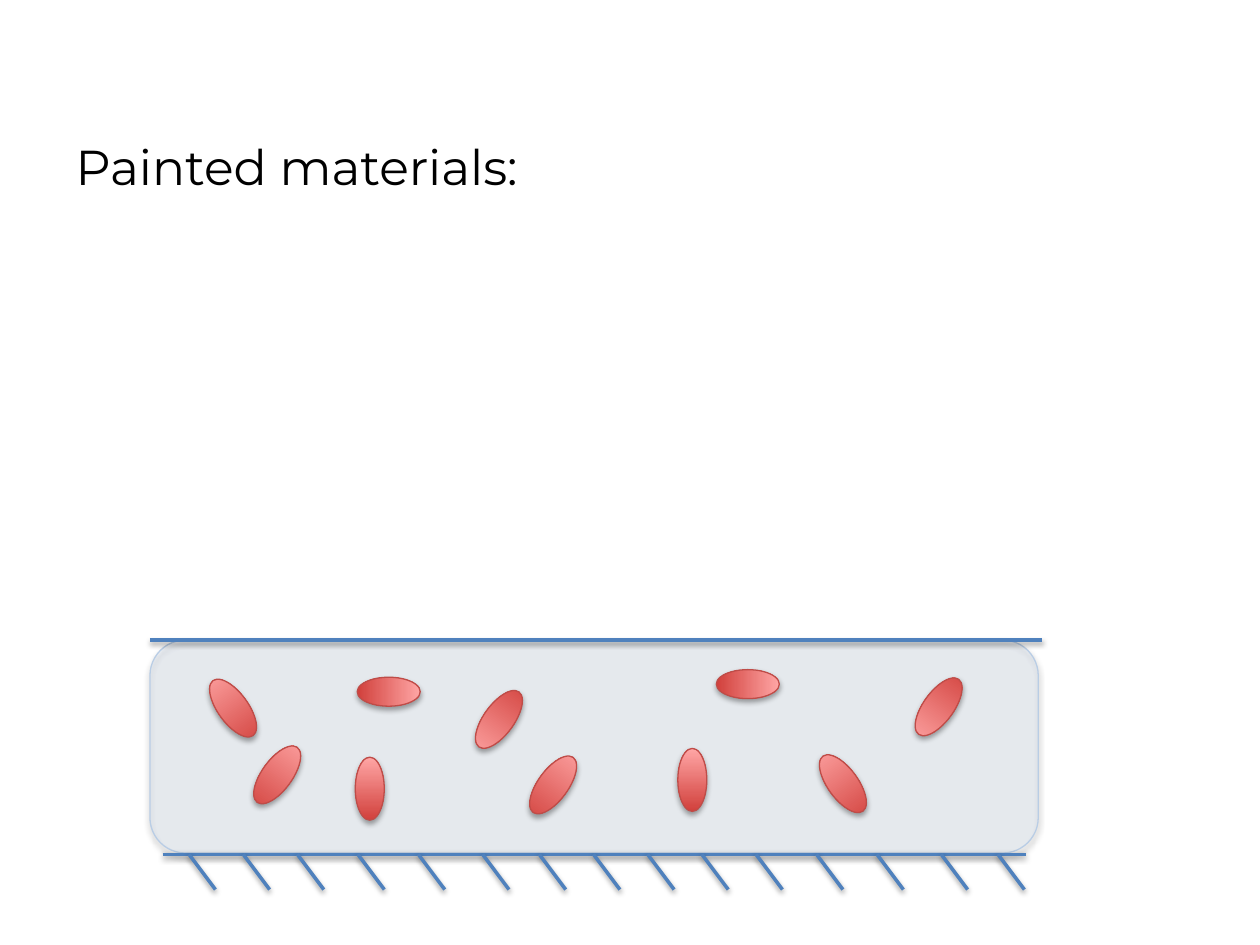
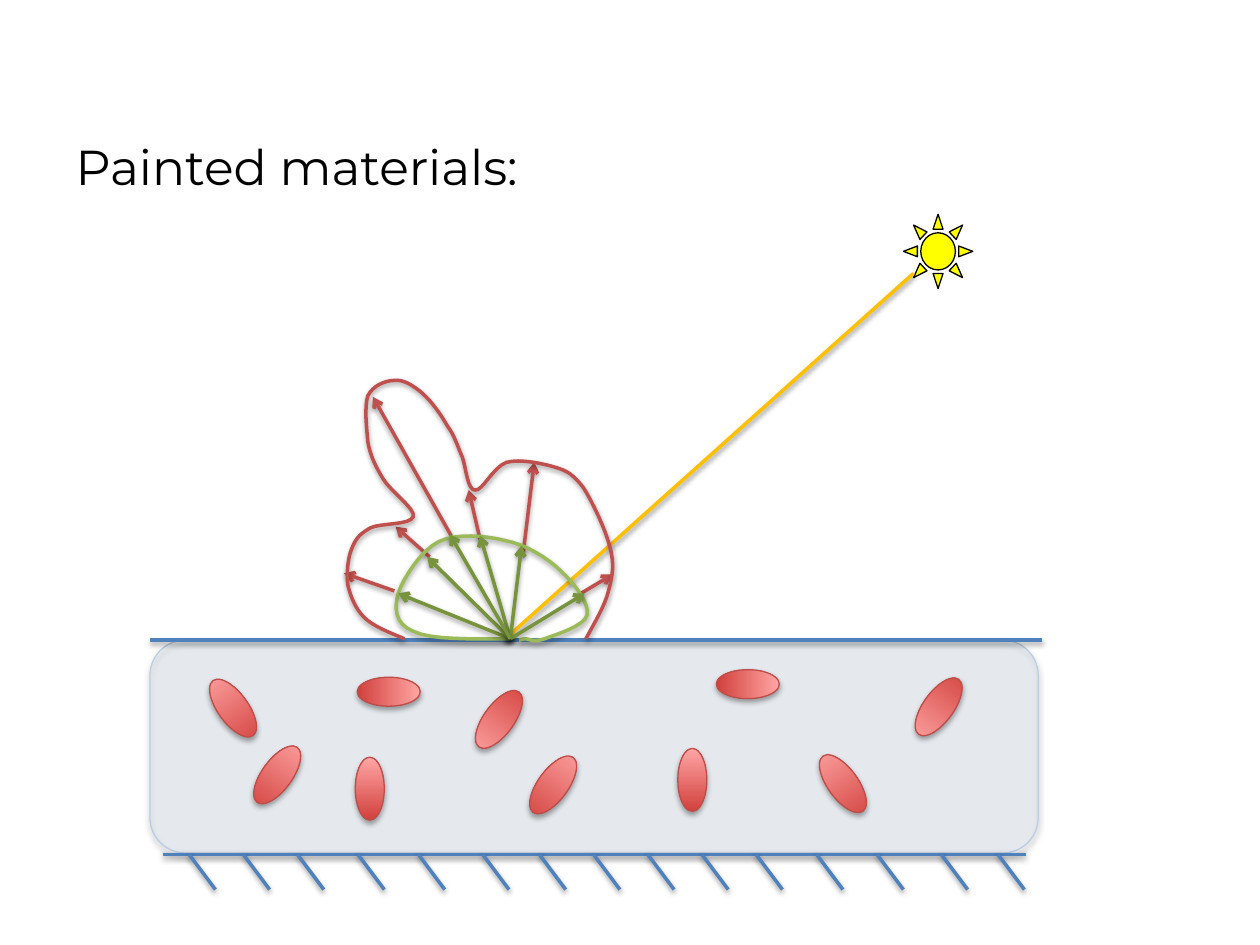
from itertools import accumulate

from lxml.etree import SubElement
from pptx import Presentation
from pptx.dml.color import RGBColor
from pptx.enum.shapes import MSO_CONNECTOR, MSO_SHAPE
from pptx.enum.text import MSO_ANCHOR, PP_ALIGN
from pptx.oxml.ns import qn
from pptx.util import Inches, Pt

FONT = "Montserrat"
BLACK = RGBColor(0x00, 0x00, 0x00)
BLUE = RGBColor(0x4F, 0x81, 0xBD)
PALE = RGBColor(0xC6, 0xD9, 0xF1)
EDGE = RGBColor(0xB9, 0xCD, 0xE5)
RED = RGBColor(0xC0, 0x50, 0x4D)
RUST = RGBColor(0xBF, 0x4C, 0x48)
DARK = RGBColor(0xD1, 0x40, 0x3C)
PINK = RGBColor(0xFF, 0xA6, 0xA5)
GREEN = RGBColor(0x9B, 0xBB, 0x59)
OLIVE = RGBColor(0x77, 0x93, 0x3C)
GOLD = RGBColor(0xFF, 0xC0, 0x00)
YELLOW = RGBColor(0xFF, 0xFF, 0x00)

TOP, BASE = 5.08, 6.78
GAPS = (0.43, 0.43, 0.48, 0.48, 0.51, 0.45)
TICKS = tuple(accumulate((1.5, *GAPS, 0.43, 0.43, *GAPS)))

SMALL, LARGE = (0.23, 0.5), (0.24, 0.54)
FLAKES = (
    (5.38, 5.94, SMALL, 0, False),
    (5.82, 5.18, SMALL, 90, False),
    (6.57, 5.95, LARGE, 324, False),
    (7.33, 5.34, LARGE, 36, True),
    (2.08, 5.88, LARGE, 36, False),
    (1.73, 5.35, LARGE, 324, False),
    (3.84, 5.44, LARGE, 36, True),
    (2.97, 5.24, SMALL, 90, False),
    (2.82, 6.01, SMALL, 0, False),
    (4.27, 5.96, LARGE, 36, False),
)

HIT = (4.05, 5.07)
RED_RAYS = (
    ((3.13, 4.69), (2.73, 4.55)),
    ((3.41, 4.42), (3.14, 4.18)),
    ((3.81, 4.28), (3.72, 3.89)),
    ((4.15, 4.41), (4.24, 3.67)),
    ((4.61, 4.71), (4.86, 4.56)),
    ((3.58, 4.25), (2.96, 3.15)),
)
GREEN_TIPS = ((3.16, 4.71), (3.39, 4.42), (3.81, 4.25),
              (4.14, 4.33), (4.64, 4.71), (3.57, 4.24))

RED_LOBE = (
    (3.21, 5.07),
    (3.09, 5.02), (2.96, 4.97), (2.89, 4.9),
    (2.82, 4.83), (2.78, 4.73), (2.76, 4.64),
    (2.75, 4.55), (2.76, 4.43), (2.79, 4.36),
    (2.82, 4.28), (2.85, 4.24), (2.94, 4.19),
    (3.02, 4.15), (3.26, 4.17), (3.28, 4.1),
    (3.3, 4.04), (3.1, 3.9), (3.04, 3.8),
    (2.98, 3.7), (2.94, 3.62), (2.92, 3.51),
    (2.91, 3.4), (2.89, 3.23), (2.92, 3.14),
    (2.96, 3.06), (3.06, 3.02), (3.13, 3.02),
    (3.2, 3.01), (3.28, 3.06), (3.35, 3.12),
    (3.42, 3.18), (3.5, 3.29), (3.55, 3.38),
    (3.61, 3.46), (3.63, 3.54), (3.67, 3.63),
    (3.7, 3.72), (3.71, 3.89), (3.77, 3.89),
    (3.83, 3.9), (3.91, 3.71), (4.02, 3.67),
    (4.13, 3.64), (4.31, 3.68), (4.41, 3.71),
    (4.51, 3.74), (4.55, 3.77), (4.63, 3.87),
    (4.7, 3.98), (4.81, 4.21), (4.84, 4.34),
    (4.88, 4.48), (4.86, 4.57), (4.83, 4.69),
    (4.8, 4.81), (4.72, 4.94), (4.65, 5.07),
)
GREEN_LOBE = (
    (4.05, 5.07),
    (3.74, 5.07), (3.42, 5.08), (3.28, 5.01),
    (3.13, 4.95), (3.13, 4.82), (3.16, 4.71),
    (3.2, 4.59), (3.34, 4.37), (3.48, 4.3),
    (3.62, 4.23), (3.85, 4.25), (4.01, 4.29),
    (4.17, 4.32), (4.35, 4.43), (4.45, 4.53),
    (4.56, 4.63), (4.68, 4.79), (4.66, 4.88),
    (4.64, 4.97), (4.4, 5.04), (4.32, 5.07),
    (4.23, 5.1), (4.2, 5.07), (4.17, 5.07),
    (4.14, 5.07), (4.13, 5.08), (4.12, 5.08),
)


def trace(knots, steps=8):
    points = [knots[0]]
    for i in range(0, len(knots) - 1, 3):
        a, b, c, d = knots[i:i + 4]
        for step in range(1, steps + 1):
            t = step / steps
            u = 1 - t
            points.append(tuple(
                u**3 * p + 3 * u * u * t * q + 3 * u * t * t * r + t**3 * s
                for p, q, r, s in zip(a, b, c, d)))
    return [(Inches(x), Inches(y)) for x, y in points]


class Deck:
    def __init__(self):
        self.show = Presentation()
        self.show.slide_width = Inches(10)
        self.show.slide_height = Inches(7.5)
        self.slide = None

    def start(self, text):
        self.slide = self.show.slides.add_slide(self.show.slide_layouts[5])
        title = self.slide.shapes.title
        title.left, title.top = Inches(0.5), Inches(0.8)
        title.width, title.height = Inches(9), Inches(1.03)
        title.text_frame.text = text
        title.text_frame.vertical_anchor = MSO_ANCHOR.MIDDLE
        para = title.text_frame.paragraphs[0]
        para.alignment = PP_ALIGN.LEFT
        para.font.name = FONT
        para.font.size = Pt(28)
        para.font.color.rgb = BLACK

    def shade(self, shape, drop, alpha):
        effect = SubElement(shape._element.spPr, qn("a:effectLst"))
        shadow = SubElement(effect, qn("a:outerShdw"), blurRad=str(Pt(3.1)),
                            dist=str(Pt(drop)), dir="5400000", rotWithShape="0")
        color = SubElement(shadow, qn("a:srgbClr"), val=str(BLACK))
        SubElement(color, qn("a:alpha"), val=str(alpha * 1000))

    def stroke(self, shape, color, width=2):
        shape.line.color.rgb = color
        shape.line.width = Pt(width)

    def line(self, start, end, color=BLUE, arrow=False):
        ends = [Inches(v) for v in (*start, *end)]
        link = self.slide.shapes.add_connector(MSO_CONNECTOR.STRAIGHT, *ends)
        self.stroke(link, color)
        if arrow:
            SubElement(link.line._get_or_add_ln(), qn("a:tailEnd"), type="arrow")
        self.shade(link, 1.6, 38)

    def shape(self, kind, x, y, w, h, edge, width):
        box = [Inches(v) for v in (x, y, w, h)]
        shape = self.slide.shapes.add_shape(kind, *box)
        self.stroke(shape, edge, width)
        return shape

    def pane(self):
        pane = self.shape(MSO_SHAPE.ROUNDED_RECTANGLE,
                          1.19, TOP, 7.05, 1.69, EDGE, 0.75)
        pane.fill.solid()
        pane.fill.fore_color.rgb = PALE
        color = pane._element.spPr.find(qn("a:solidFill")).find(qn("a:srgbClr"))
        SubElement(color, qn("a:alpha"), val="20000")
        self.shade(pane, 1.8, 35)

    def flake(self, x, y, size, turn, flip):
        flake = self.shape(MSO_SHAPE.OVAL, x, y, *size, RUST, 0.75)
        flake.rotation = turn
        if flip:
            flake._element.spPr.xfrm.set("flipV", "1")
        flake.fill.gradient()
        flake.fill.gradient_angle = 90
        for stop, color in zip(flake.fill.gradient_stops, (DARK, PINK)):
            stop.color.rgb = color
        self.shade(flake, 1.8, 35)

    def sun(self):
        sun = self.shape(MSO_SHAPE.SUN, 7.17, 1.7, 0.55, 0.59, BLACK, 0)
        sun.fill.solid()
        sun.fill.fore_color.rgb = YELLOW
        sun.shadow.inherit = False

    def lobe(self, knots, color):
        first, *rest = trace(knots)
        pen = self.slide.shapes.build_freeform(*first)
        pen.add_line_segments(rest, close=False)
        lobe = pen.convert_to_shape()
        lobe.fill.background()
        self.stroke(lobe, color)
        self.shade(lobe, 1.6, 38)

    def paint(self):
        self.pane()
        self.line((1.19, TOP), (8.27, TOP))
        self.line((1.29, BASE), (8.14, BASE))
        for x in TICKS:
            self.line((x, BASE), (x + 0.21, 7.06))
        for flake in FLAKES:
            self.flake(*flake)

    def light(self):
        for start, end in RED_RAYS:
            self.line(start, end, RED, arrow=True)
        self.sun()
        self.line((7.25, 2.17), (4, TOP), GOLD, arrow=True)
        self.lobe(RED_LOBE, RED)
        self.lobe(GREEN_LOBE, GREEN)
        for tip in GREEN_TIPS:
            self.line(HIT, tip, OLIVE, arrow=True)


def main():
    deck = Deck()
    for lit in (False, True):
        deck.start("Painted materials:")
        deck.paint()
        if lit:
            deck.light()
    deck.show.save("out.pptx")


if __name__ == "__main__":
    main()
